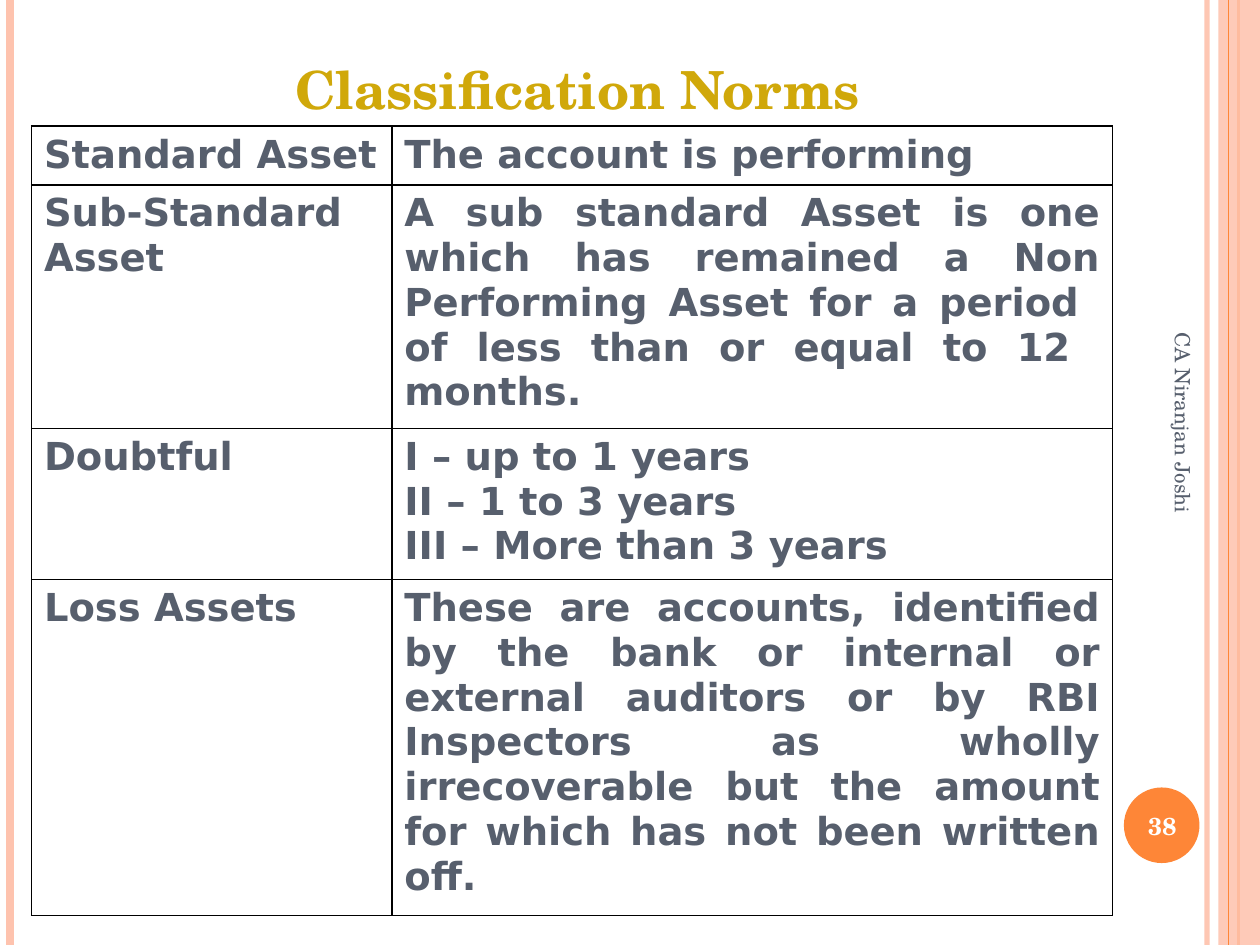
from dataclasses import dataclass

from lxml import etree
from pptx import Presentation
from pptx import util as u
from pptx.dml.color import RGBColor
from pptx.enum import shapes, text
from pptx.oxml import ns


@dataclass(frozen=True)
class Theme:
    orange: str = "FE8637"
    peach: str = "FEC3AE"
    gold: str = "D0A80A"
    slate: str = "575F6D"
    white: str = "FFFFFF"
    black: str = "000000"
    serif: str = "TeX Gyre Schola"
    sans: str = "DejaVu Sans"
    title_size: int = 30
    table_size: int = 22
    number_size: int = 14
    footer_size: int = 12


class SlideBuilder:
    """Draws styled elements on the current slide."""

    def __init__(self, slide, theme):
        self.slide = slide
        self.theme = theme

    def set_alpha(self, fill_parent, percent):
        color = fill_parent.find(".//" + ns.qn("a:srgbClr"))
        etree.SubElement(color, ns.qn("a:alpha"), val=str(percent * 1000))

    def vertical_line(self, x, color, width, alpha=100):
        line = self.slide.shapes.add_connector(
            shapes.MSO_CONNECTOR.STRAIGHT,
            u.Inches(x), u.Inches(0), u.Inches(x), u.Inches(7.5))
        line.line.color.rgb = RGBColor.from_string(color)
        line.line.width = u.Pt(width)
        properties = line._element.spPr
        if alpha < 100:
            self.set_alpha(properties, alpha)
        etree.SubElement(properties, ns.qn("a:effectLst"))

    def filled_shape(self, kind, box, color, alpha=100):
        shape = self.slide.shapes.add_shape(kind, *map(u.Inches, box))
        shape.shadow.inherit = False
        shape.fill.solid()
        shape.fill.fore_color.rgb = RGBColor.from_string(color)
        shape.line.fill.background()
        if alpha < 100:
            self.set_alpha(shape._element.spPr, alpha)

    def styled_run(self, paragraph, words, font, size, color, align, bold=True):
        paragraph.alignment = align
        run = paragraph.add_run()
        run.text = words
        run.font.name = font
        run.font.size = u.Pt(size)
        run.font.bold = bold
        run.font.color.rgb = RGBColor.from_string(color)

    def label(self, box, words, size, color, align=text.PP_ALIGN.CENTER,
              anchor=text.MSO_ANCHOR.MIDDLE, bold=True, rotation=0):
        shape = self.slide.shapes.add_textbox(*map(u.Inches, box))
        shape.rotation = rotation
        frame = shape.text_frame
        frame.word_wrap = True
        frame.vertical_anchor = anchor
        self.styled_run(frame.paragraphs[0], words, self.theme.serif,
                        size, color, align, bold)

    def border(self, cell):
        properties = cell._tc.get_or_add_tcPr()
        for index, side in enumerate(("lnL", "lnR", "lnT", "lnB")):
            edge = etree.Element(ns.qn("a:" + side), w=str(u.Pt(1)))
            fill = etree.SubElement(edge, ns.qn("a:solidFill"))
            etree.SubElement(fill, ns.qn("a:srgbClr"), val=self.theme.black)
            properties.insert(index, edge)

    def table(self, left, top, widths, heights, rows):
        frame = self.slide.shapes.add_table(
            len(rows), len(widths), u.Inches(left), u.Inches(top),
            u.Inches(sum(widths)), u.Inches(sum(heights)))
        table = frame.table
        table.first_row = table.horz_banding = False
        for column, width in zip(table.columns, widths):
            column.width = u.Inches(width)
        aligns = (text.PP_ALIGN.LEFT, text.PP_ALIGN.JUSTIFY)
        for row, height, contents in zip(table.rows, heights, rows):
            row.height = u.Inches(height)
            for cell, lines, align in zip(row.cells, contents, aligns):
                cell.fill.background()
                self.border(cell)
                body = cell.text_frame
                for index, words in enumerate(lines):
                    paragraph = body.add_paragraph() if index else body.paragraphs[0]
                    self.styled_run(paragraph, words, self.theme.sans,
                                    self.theme.table_size, self.theme.slate, align)


NORMS = [
    (["Standard Asset"], ["The account is performing"]),
    (["Sub-Standard Asset"],
     ["A sub standard Asset is one which has remained a Non Performing Asset "
      "for a period  of less than or equal to 12  months."]),
    (["Doubtful"],
     ["I – up to 1 years", "II – 1 to 3 years", "III – More than 3 years"]),
    (["Loss Assets"],
     ["These are accounts, identified by the bank or internal or external "
      "auditors or by RBI Inspectors as wholly irrecoverable but the amount "
      "for which has not been written off."]),
]


def main():
    presentation = Presentation()
    presentation.slide_width = u.Inches(10)
    presentation.slide_height = u.Inches(7.5)
    theme = Theme()
    builder = SlideBuilder(
        presentation.slides.add_slide(presentation.slide_layouts[6]), theme)

    builder.vertical_line(9.58, theme.peach, 3, alpha=93)
    builder.vertical_line(0.08, theme.peach, 4.5)
    builder.vertical_line(9.83, theme.orange, 1.5)
    builder.filled_shape(shapes.MSO_SHAPE.RECTANGLE, (9.67, 0, 0.33, 7.5),
                         theme.peach, alpha=87)
    builder.vertical_line(9.75, theme.orange, 0.75)
    builder.filled_shape(shapes.MSO_SHAPE.OVAL, (8.92, 6.25, 0.6, 0.6), theme.orange)

    builder.label((0.5, 0.3, 8.17, 0.7), "Classification Norms", theme.title_size,
                  theme.gold, anchor=text.MSO_ANCHOR.BOTTOM)
    builder.label((7.64, 4.09, 3.5, 0.4), "CA Niranjan Joshi", theme.footer_size,
                  theme.slate, align=text.PP_ALIGN.LEFT, bold=False, rotation=90)
    builder.label((8.89, 6.27, 0.67, 0.57), "38", theme.number_size, theme.white)
    builder.table(0.25, 1, (2.86, 5.72), (0.45, 1.87, 1.16, 2.58), NORMS)

    presentation.save("out.pptx")


if __name__ == "__main__":
    main()
